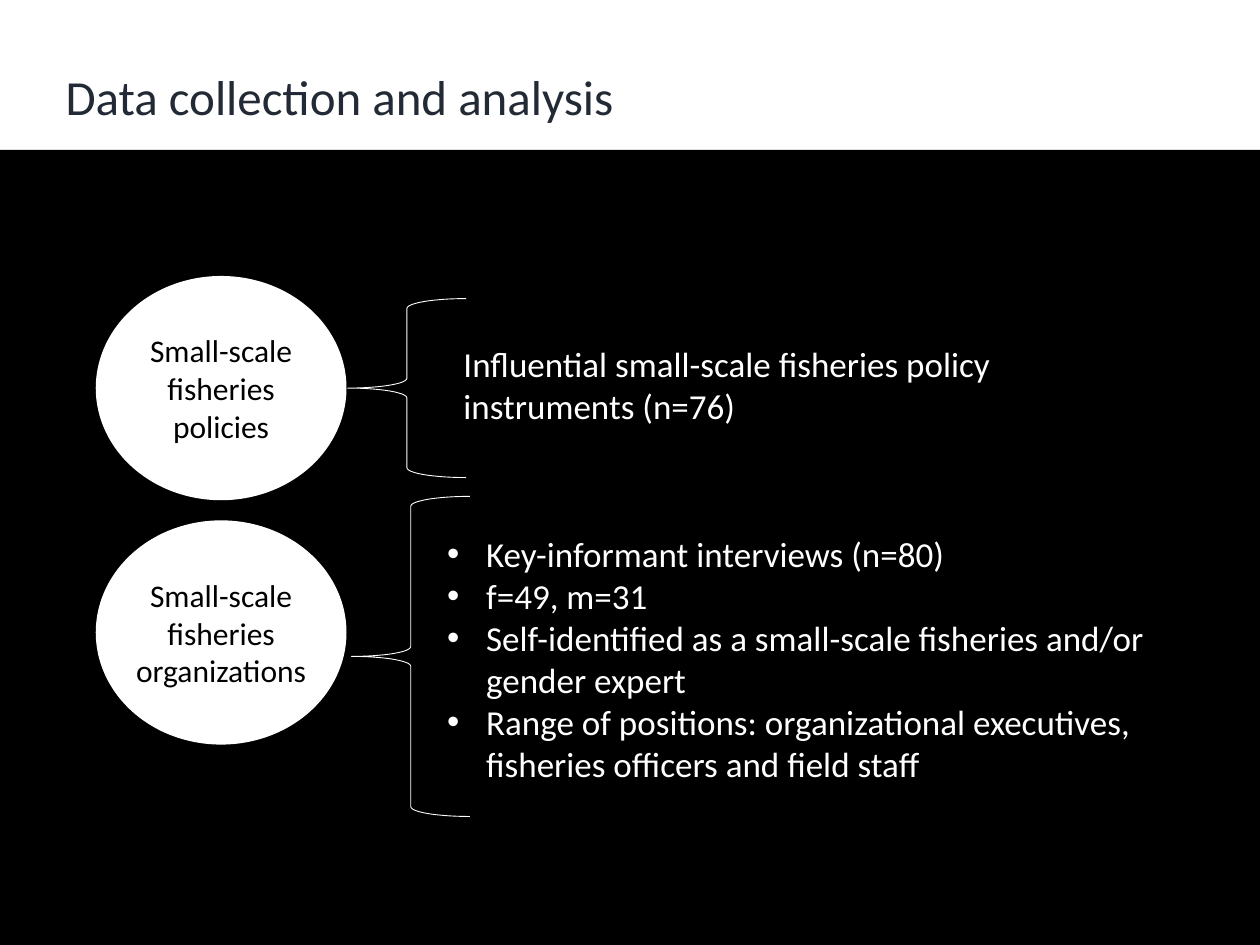
from dataclasses import dataclass

from lxml import etree
from pptx import Presentation
from pptx.dml.color import RGBColor
from pptx.enum.shapes import MSO_SHAPE
from pptx.enum.text import MSO_ANCHOR, MSO_AUTO_SIZE, PP_ALIGN
from pptx.oxml.ns import qn
from pptx.util import Inches, Pt

RECT, OVAL, BRACE = MSO_SHAPE.RECTANGLE, MSO_SHAPE.OVAL, MSO_SHAPE.LEFT_BRACE
TOP, MIDDLE = MSO_ANCHOR.TOP, MSO_ANCHOR.MIDDLE
LEFT, CENTER = PP_ALIGN.LEFT, PP_ALIGN.CENTER
GROW = MSO_AUTO_SIZE.SHAPE_TO_FIT_TEXT
TITLE_ONLY = 5
COLS, ROWS = 100, 75


@dataclass(frozen=True)
class Theme:
    font: str = "Calibri"
    dark: str = "000000"
    light: str = "FFFFFF"
    navy: str = "222A35"
    head: int = 28
    body: int = 20
    label: int = 18
    rule: float = 0.5
    indent: float = 0.31


class Board:
    def __init__(self, deck, theme):
        self.theme = theme
        self.slide = deck.slides.add_slide(deck.slide_layouts[TITLE_ONLY])
        self.col = deck.slide_width / COLS
        self.row = deck.slide_height / ROWS

    def place(self, x, y, w, h):
        return (round(x * self.col), round(y * self.row),
                round(w * self.col), round(h * self.row))

    def fill_text(self, frame, lines, size, color, align=LEFT, bullet=False):
        frame.word_wrap = True
        frame.text = "\n".join(lines)
        for para in frame.paragraphs:
            if bullet:
                self.mark(para)
            para.alignment = align
            for run in para.runs:
                run.font.name = self.theme.font
                run.font.size = Pt(size)
                run.font.color.rgb = RGBColor.from_string(color)

    def mark(self, para):
        props = para._p.get_or_add_pPr()
        gap = Inches(self.theme.indent)
        props.set("marL", str(gap))
        props.set("indent", str(-gap))
        etree.SubElement(props, qn("a:buFont")).set("typeface", "Arial")
        etree.SubElement(props, qn("a:buChar")).set("char", "•")

    def title(self, text, *area):
        box = self.slide.shapes.title
        box.left, box.top, box.width, box.height = self.place(*area)
        box.text_frame.vertical_anchor = TOP
        box.text_frame.auto_size = GROW
        self.fill_text(box.text_frame, [text], self.theme.head, self.theme.navy)

    def text(self, lines, *area, bullet=False):
        frame = self.slide.shapes.add_textbox(*self.place(*area)).text_frame
        frame.auto_size = GROW
        self.fill_text(frame, lines, self.theme.body, self.theme.light,
                       bullet=bullet)

    def shape(self, kind, color, *area):
        item = self.slide.shapes.add_shape(kind, *self.place(*area))
        item.shadow.inherit = False
        item.fill.solid()
        item.fill.fore_color.rgb = RGBColor.from_string(color)
        item.line.fill.background()
        return item

    def circle(self, text, *area):
        frame = self.shape(OVAL, self.theme.light, *area).text_frame
        frame.margin_left = frame.margin_right = 0
        frame.vertical_anchor = MIDDLE
        self.fill_text(frame, [text], self.theme.label, self.theme.dark, CENTER)

    def brace(self, *area):
        item = self.shape(BRACE, self.theme.dark, *area)
        item.fill.background()
        item.line.color.rgb = RGBColor.from_string(self.theme.light)
        item.line.width = Pt(self.theme.rule)


def main():
    deck = Presentation()
    deck.slide_width, deck.slide_height = Inches(10), Inches(7.5)
    theme = Theme()
    board = Board(deck, theme)

    # Heading above a dark panel
    board.shape(RECT, theme.dark, 0, 11.9, COLS, ROWS - 11.9)
    board.title("Data collection and analysis", 4.2, 4.8, 81, 5.7)

    # Data sources, one below the other
    for i, topic in enumerate(("policies", "organizations")):
        board.circle(f"Small-scale fisheries {topic}",
                     7.6, 21.9 + 19.4 * i, 19.9, 17.8)

    # Braces lead to the details
    board.brace(27.6, 23.7, 9.4, 14.2)
    board.brace(27.9, 39.4, 9.4, 25.4)
    board.text(["Influential small-scale fisheries policy instruments (n=76)"],
               35.8, 26.7, 47.9, 7.7)
    board.text([
        "Key-informant interviews (n=80)",
        "f=49, m=31",
        "Self-identified as a small-scale fisheries and/or gender expert",
        "Range of positions: organizational executives, "
        "fisheries officers and field staff",
    ], 34.5, 41.8, 59.9, 21.2, bullet=True)

    deck.save("out.pptx")


if __name__ == "__main__":
    main()
